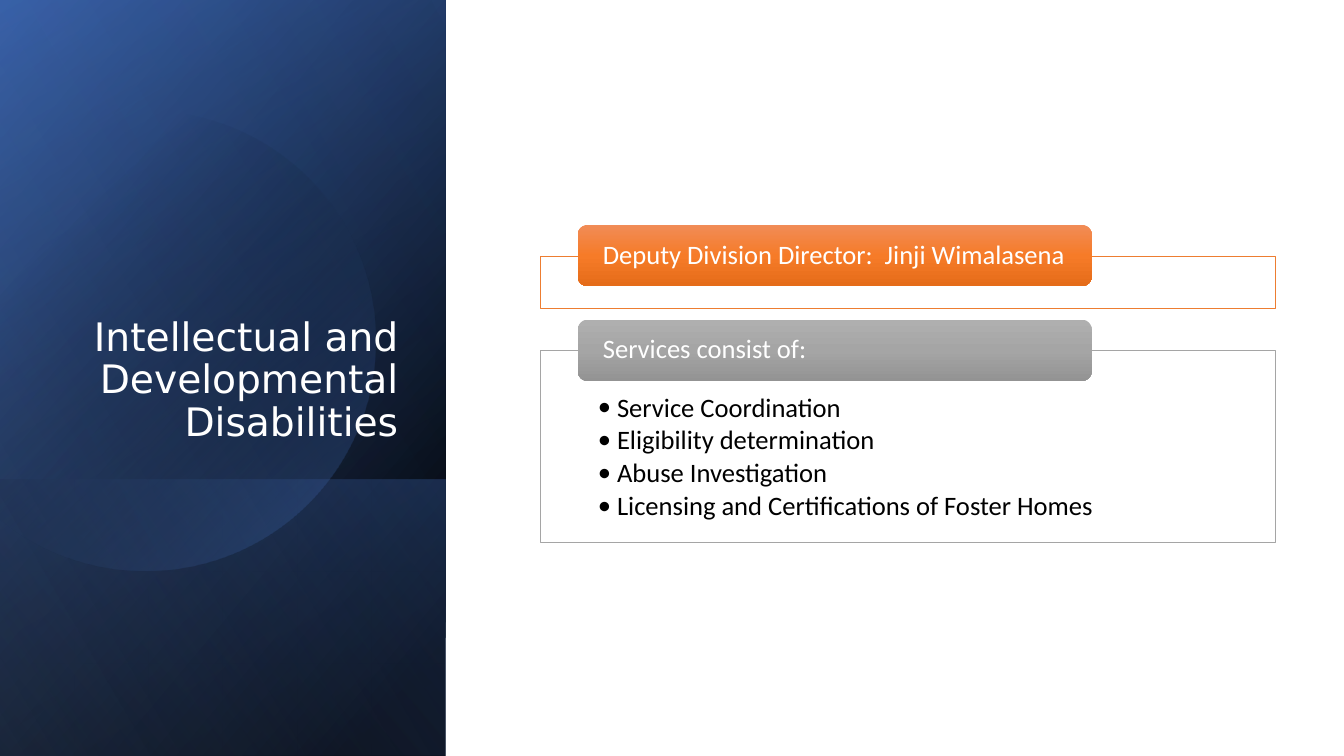
from pptx import Presentation
from pptx.dml.color import RGBColor
from pptx.enum.shapes import MSO_SHAPE
from pptx.enum.text import MSO_ANCHOR, PP_ALIGN
from pptx.oxml import parse_xml
from pptx.oxml.ns import nsdecls
from pptx.util import Inches, Pt

COLORS = {
    "white": "FFFFFF", "black": "000000", "navy": "2F5597", "blue": "4472C4",
    "pale": "8FAADC", "orange": "ED7D31", "gray": "A5A5A5",
    "orange_top": "F18C57", "orange_mid": "F67B28", "orange_low": "E56C19",
    "gray_top": "AFAFAF", "gray_low": "939393",
}


def set_gradient(sp, stops, angle):
    """Fill with (position %, colour, opacity %) stops and drop the outline."""
    gs = "".join(
        f'<a:gs pos="{pos * 1000}"><a:srgbClr val="{COLORS[color]}">'
        f'<a:alpha val="{alpha * 1000}"/></a:srgbClr></a:gs>'
        for pos, color, alpha in stops)
    grad = parse_xml(
        f'<a:gradFill {nsdecls("a")} rotWithShape="1"><a:gsLst>{gs}</a:gsLst>'
        f'<a:lin ang="{angle * 60000}" scaled="0"/></a:gradFill>')
    sp.shadow.inherit = False
    sp.line.fill.background()
    sp.fill.background()
    no_fill = sp._element.spPr.find("{*}noFill")
    no_fill.getparent().replace(no_fill, grad)


def style_text(p, size, font, color):
    p.line_spacing = 0.9
    for r in p.runs:
        r.font.size = Pt(size)
        r.font.name = font
        r.font.color.rgb = RGBColor.from_string(COLORS[color])


prs = Presentation()
prs.slide_width, prs.slide_height = Inches(13.33), Inches(7.5)
s = prs.slides.add_slide(prs.slide_layouts[5])
title = s.shapes.title

# White ground
ground = s.shapes.add_shape(MSO_SHAPE.RECTANGLE, 0, 0, prs.slide_width, prs.slide_height)
ground.shadow.inherit = False
ground.fill.solid()
ground.fill.fore_color.rgb = RGBColor.from_string(COLORS["white"])
ground.line.fill.background()

# Left panel: turned rectangles with layered gradients
base = (-1.54, 1.54, 7.5, 4.42)
lower = (0.84, 3.92, 2.74, 4.42)
panels = [
    (base, [(8, "black", 100), (100, "navy", 100)], 50),
    (base, [(0, "black", 0), (99, "blue", 46)], 30),
    (lower, [(2, "blue", 29), (100, "black", 30)], 130),
    (base, [(0, "black", 0), (99, "pale", 11)], 120),
]
layers = []
for box, stops, angle in panels:
    sp = s.shapes.add_shape(MSO_SHAPE.RECTANGLE, *map(Inches, box))
    sp.rotation = 90
    sp._element.spPr.xfrm.set("flipH", "1")
    set_gradient(sp, stops, angle)
    layers.append(sp)

# Circle cut off by the left edge, below the last panel layer
circle = s.shapes.add_shape(MSO_SHAPE.CHORD, Inches(-0.84), Inches(1.1),
                            Inches(4.56), Inches(4.56))
for i, degrees in enumerate((226, 134)):
    circle.adjustments[i] = degrees * 0.6
set_gradient(circle, [(29, "black", 0), (100, "blue", 43)], 46)
layers[-1]._element.addprevious(circle._element)

# Title, moved in front of the panel
layers[-1]._element.addnext(title._element)
title.left, title.top, title.width, title.height = map(Inches, (0.64, 1.84, 3.41, 2.62))
tf = title.text_frame
tf.text = "Intellectual and Developmental Disabilities"
tf.word_wrap = True
tf.vertical_anchor = MSO_ANCHOR.BOTTOM
tf.paragraphs[0].alignment = PP_ALIGN.RIGHT
style_text(tf.paragraphs[0], 28, "DejaVu Sans", "white")

# Right side: outlined boxes with a heading tab on the upper edge
sections = [
    ("Deputy Division Director:  Jinji Wimalasena", 2.54, 0.52, "orange",
     ("orange_top", "orange_mid", "orange_low"), []),
    ("Services consist of:", 3.48, 1.9, "gray", ("gray_top", "gray", "gray_low"),
     ["Service Coordination", "Eligibility determination", "Abuse Investigation",
      "Licensing and Certifications of Foster Homes"]),
]
for heading, top, height, outline, shades, items in sections:
    box = s.shapes.add_shape(MSO_SHAPE.RECTANGLE, Inches(5.36), Inches(top),
                             Inches(7.29), Inches(height))
    box.shadow.inherit = False
    box.fill.solid()
    box.fill.fore_color.rgb = RGBColor.from_string(COLORS["white"])
    box.line.color.rgb = RGBColor.from_string(COLORS[outline])
    box.line.width = Pt(0.5)

    # Bulleted services
    if items:
        tf = box.text_frame
        tf.word_wrap = True
        tf.vertical_anchor = MSO_ANCHOR.TOP
        tf.margin_left = tf.margin_right = Inches(0.57)
        tf.margin_top, tf.margin_bottom = Inches(0.43), Inches(0.15)
        tf.text = "\n".join(items)
        for p in tf.paragraphs:
            p.alignment = PP_ALIGN.LEFT
            style_text(p, 19, "Calibri", "black")
            p.space_after = Pt(3)
            pPr = p._p.get_or_add_pPr()
            pPr.set("marL", str(Inches(0.19)))
            pPr.set("indent", str(-Inches(0.19)))
            pPr.append(parse_xml(f'<a:buFont {nsdecls("a")} typeface="Calibri"/>'))
            pPr.append(parse_xml(f'<a:buChar {nsdecls("a")} char="•"/>'))

    # Heading tab
    tab = s.shapes.add_shape(MSO_SHAPE.ROUNDED_RECTANGLE, Inches(5.73),
                             Inches(top - 0.31), Inches(5.1), Inches(0.61))
    set_gradient(tab, [(pos, shade, 100) for pos, shade in zip((0, 50, 100), shades)], 90)
    tf = tab.text_frame
    tf.word_wrap = True
    tf.vertical_anchor = MSO_ANCHOR.MIDDLE
    tf.margin_left = tf.margin_right = Inches(0.22)
    tf.margin_top = tf.margin_bottom = 0
    tf.text = heading
    tf.paragraphs[0].alignment = PP_ALIGN.LEFT
    style_text(tf.paragraphs[0], 19, "Calibri", "white")

prs.save("out.pptx")
